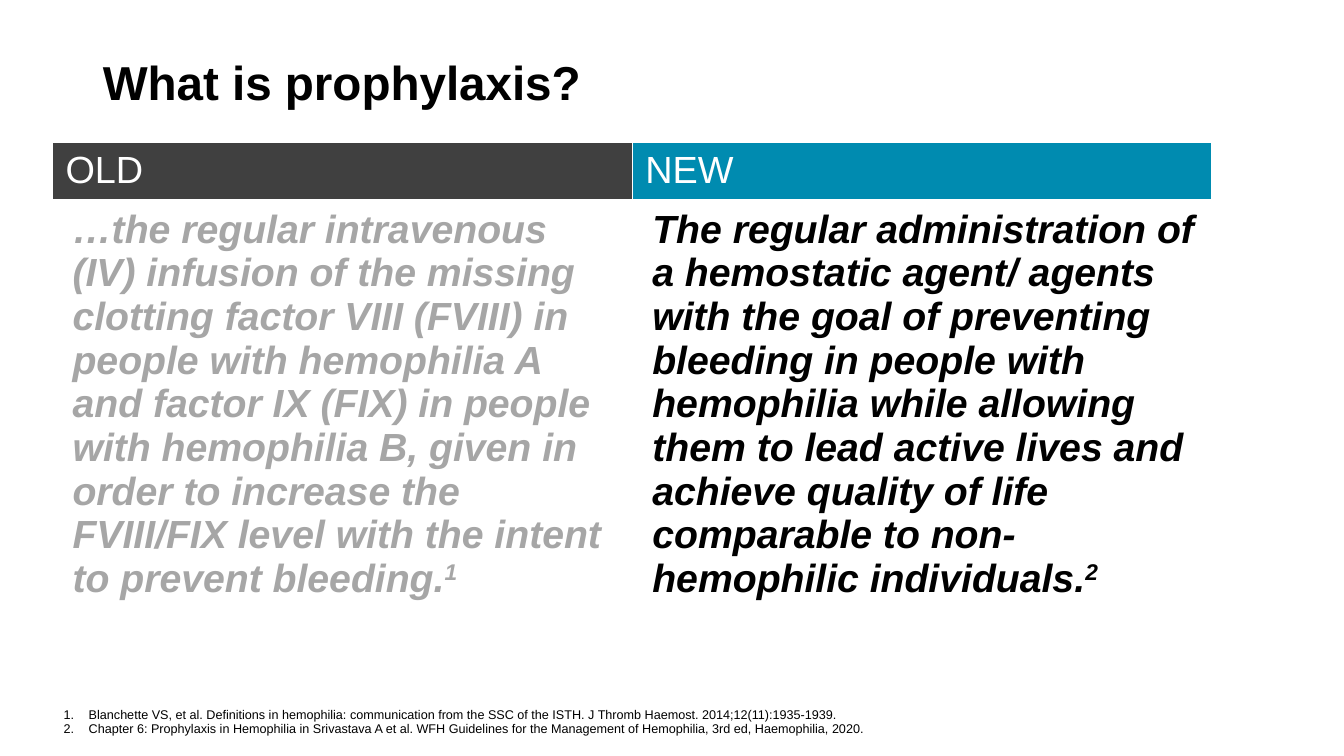
from dataclasses import dataclass

from lxml.etree import SubElement
from pptx import Presentation
from pptx.dml.color import RGBColor
from pptx.enum.text import MSO_ANCHOR, MSO_AUTO_SIZE, PP_ALIGN
from pptx.oxml.ns import qn
from pptx.util import Inches, Pt

TITLE = "What is prophylaxis?"
# heading, header fill, definition, definition colour, reference number
DEFINITIONS = [
    ("OLD", "404040",
     "…the regular intravenous (IV) infusion of the missing clotting factor VIII (FVIII) "
     "in people with hemophilia A and factor IX (FIX) in people with hemophilia B, given in "
     "order to increase the FVIII/FIX level with the intent to prevent bleeding.",
     "A6A6A6", "1"),
    ("NEW", "008BB0",
     "The regular administration of a hemostatic agent/ agents with the goal of preventing "
     "bleeding in people with hemophilia while allowing them to lead active lives and achieve "
     "quality of life comparable to non-hemophilic individuals.",
     "000000", "2"),
]
REFERENCES = [
    "Blanchette VS, et al. Definitions in hemophilia: communication from the SSC of the ISTH. "
    "J Thromb Haemost. 2014;12(11):1935-1939.",
    "Chapter 6: Prophylaxis in Hemophilia in Srivastava A et al. WFH Guidelines for the "
    "Management of Hemophilia, 3rd ed, Haemophilia, 2020.",
]


@dataclass(frozen=True)
class Theme:
    font: str = "Arial"
    text: str = "000000"
    white: str = "FFFFFF"
    title: int = 34
    heading: int = 27
    definition: int = 28
    reference: int = 9


THEME = Theme()


def add_run(paragraph, text, size, color, bold=False, italic=False, superscript=False):
    run = paragraph.add_run()
    run.text = text
    font = run.font
    font.name, font.size = THEME.font, Pt(size)
    font.bold, font.italic = bold, italic
    font.color.rgb = RGBColor.from_string(color)
    if superscript:
        run._r.get_or_add_rPr().set("baseline", "30000")


def place(shape, left, top, width, height):
    shape.left, shape.top = Inches(left), Inches(top)
    shape.width, shape.height = Inches(width), Inches(height)


def format_cell(cell, fill, left_margin, bottom_border):
    """Set fill and margins, with white borders written ahead of the fill."""
    cell.margin_left, cell.margin_right = Inches(left_margin), Inches(0.13)
    cell.margin_top = cell.margin_bottom = Inches(0.07)
    properties = cell._tc.get_or_add_tcPr()
    for side, width in (("L", 1), ("R", 1), ("T", 1), ("B", bottom_border)):
        line = SubElement(properties, qn(f"a:ln{side}"), w=str(Pt(width)))
        line_fill = SubElement(line, qn("a:solidFill"))
        SubElement(line_fill, qn("a:srgbClr"), val=THEME.white)
    cell.fill.solid()
    cell.fill.fore_color.rgb = RGBColor.from_string(fill)


def add_title(slide):
    title = slide.shapes.title
    place(title, 0.92, 0.25, 11.5, 1.19)
    frame = title.text_frame
    frame.vertical_anchor = MSO_ANCHOR.MIDDLE
    paragraph = frame.paragraphs[0]
    paragraph.alignment, paragraph.line_spacing = PP_ALIGN.LEFT, 0.9
    add_run(paragraph, TITLE, THEME.title, THEME.text, bold=True)


def add_definitions(slide):
    frame = slide.shapes.add_table(2, len(DEFINITIONS), Inches(0.52), Inches(1.41),
                                   Inches(11.5), Inches(4.93))
    table = frame.table
    for row, height in zip(table.rows, (0.58, 4.35)):
        row.height = Inches(height)
    for column, (heading, fill, definition, color, number) in enumerate(DEFINITIONS):
        header, body = table.cell(0, column), table.cell(1, column)
        format_cell(header, fill, 0.13, 3)
        add_run(header.text_frame.paragraphs[0], heading, THEME.heading, THEME.white)
        format_cell(body, THEME.white, 0.2, 1)
        paragraph = body.text_frame.paragraphs[0]
        style = dict(size=THEME.definition, color=color, bold=True, italic=True)
        add_run(paragraph, definition, **style)
        add_run(paragraph, number, superscript=True, **style)


def add_references(slide):
    body = slide.placeholders[1]
    place(body, 0.53, 6.93, 10.25, 0.37)
    frame = body.text_frame
    frame.auto_size, frame.word_wrap = MSO_AUTO_SIZE.NONE, True
    frame.vertical_anchor = MSO_ANCHOR.BOTTOM
    frame.margin_bottom = 0
    for index, reference in enumerate(REFERENCES):
        paragraph = frame.add_paragraph() if index else frame.paragraphs[0]
        properties = paragraph._p.get_or_add_pPr()
        properties.set("marL", str(Inches(0.25)))
        properties.set("indent", str(-Inches(0.25)))
        SubElement(properties, qn("a:buFont"), typeface="+mj-lt")
        SubElement(properties, qn("a:buAutoNum"), type="arabicPeriod")
        paragraph.line_spacing, paragraph.space_before = 0.9, Pt(0)
        add_run(paragraph, reference, THEME.reference, THEME.text)


def main():
    presentation = Presentation()
    presentation.slide_width, presentation.slide_height = Inches(13.33), Inches(7.5)
    slide = presentation.slides.add_slide(presentation.slide_layouts[1])
    add_title(slide)
    add_definitions(slide)
    add_references(slide)
    presentation.save("out.pptx")


if __name__ == "__main__":
    main()
